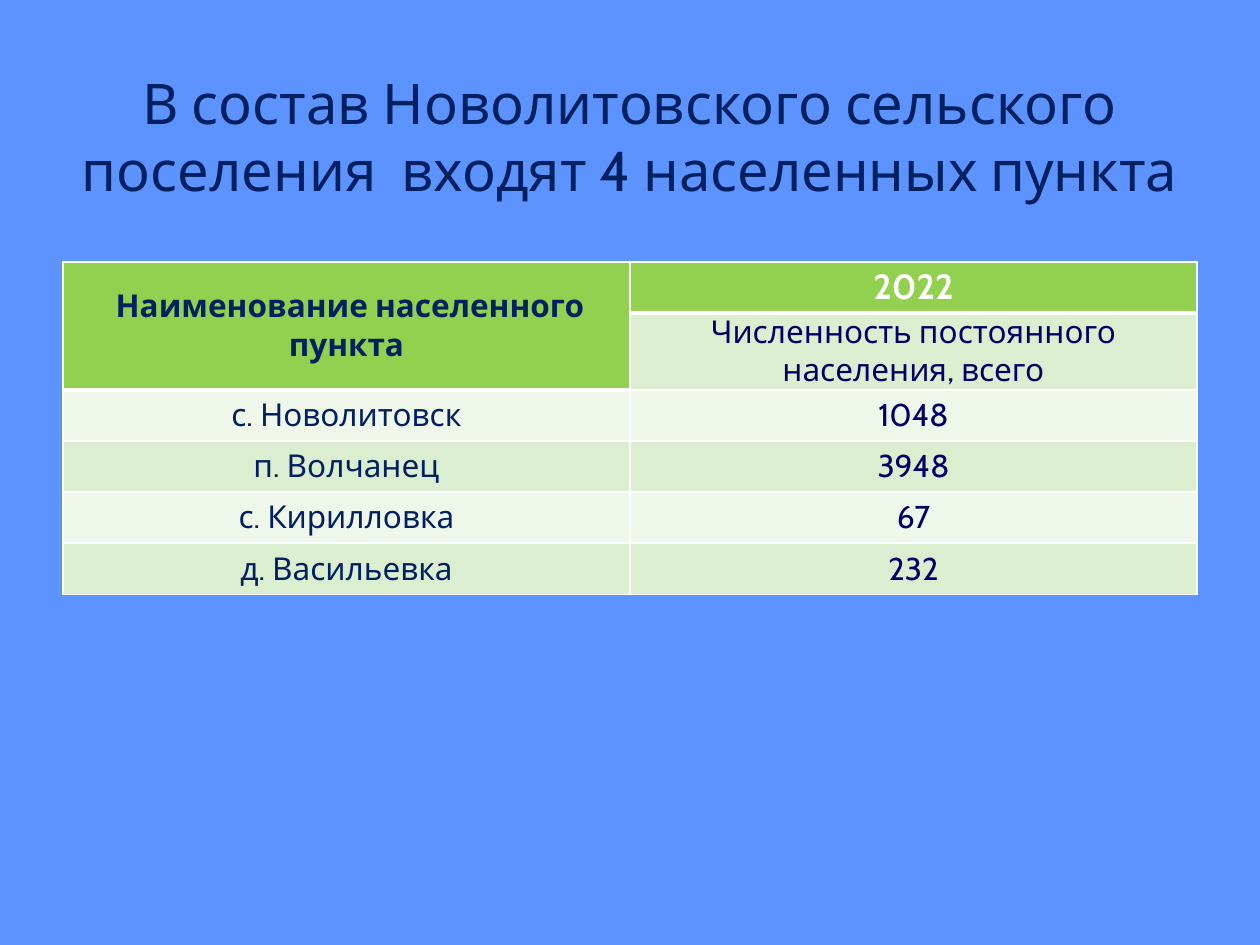
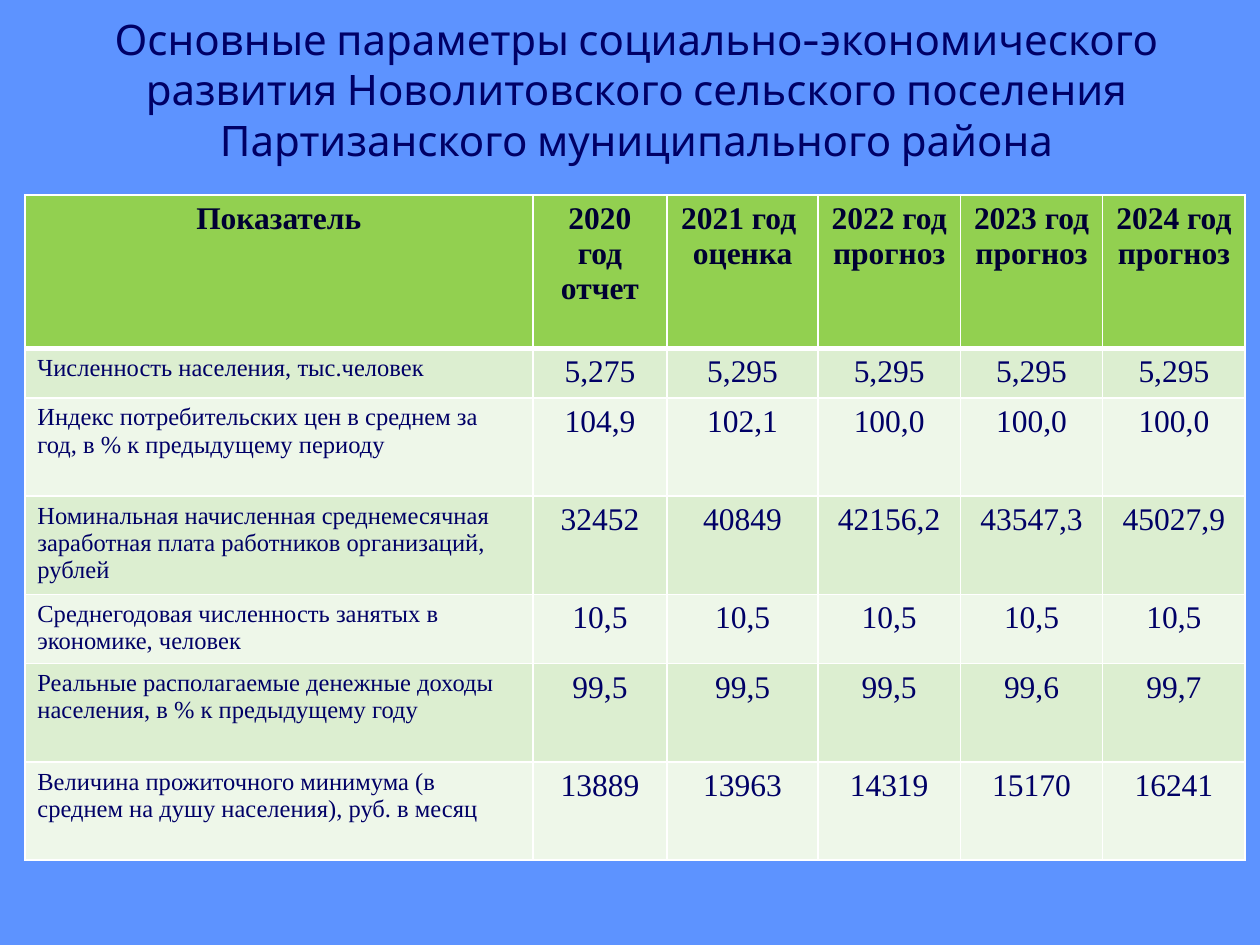
from lxml.etree import SubElement
from pptx import Presentation
from pptx.dml.color import RGBColor
from pptx.enum.text import MSO_ANCHOR, PP_ALIGN
from pptx.oxml.ns import qn
from pptx.util import Cm, Pt

COLORS = {
    "background": "5D93FF", "header": "92D050", "band": "DCEED0", "light": "EEF7E9",
    "border": "FFFFFF", "white": "FFFFFF", "navy": "002060", "indigo": "000066",
    "dark": "000033",
}
TITLE_FONT = "Cabin"
TABLE_FONT = "Times New Roman"


def color(name):
    return RGBColor.from_string(COLORS[name])


class Deck:
    """Holds the shared style and the current slide."""

    def __init__(self):
        self.presentation = Presentation()
        self.presentation.slide_width = Cm(25.4)
        self.presentation.slide_height = Cm(19.05)
        fill = self.presentation.slide_master.background.fill
        fill.solid()
        fill.fore_color.rgb = color("background")

    def add_slide(self):
        self.slide = self.presentation.slides.add_slide(self.presentation.slide_layouts[5])

    def set_text(self, text_frame, text, font, size, color_name, bold=False,
                 alignment=PP_ALIGN.CENTER):
        text_frame.text = text
        for paragraph in text_frame.paragraphs:
            paragraph.alignment = alignment
            for run in paragraph.runs:
                run.font.name = font
                run.font.size = Pt(size)
                run.font.bold = bold
                run.font.color.rgb = color(color_name)

    def title(self, text, left, top, height, size, color_name):
        shape = self.slide.shapes.title
        shape.left, shape.top, shape.width, shape.height = Cm(left), Cm(top), Cm(22.86), Cm(height)
        shape.text_frame.vertical_anchor = MSO_ANCHOR.MIDDLE
        self.set_text(shape.text_frame, text, TITLE_FONT, size, color_name)

    def table(self, left, top, widths, heights):
        table = self.slide.shapes.add_table(
            len(heights), len(widths), Cm(left), Cm(top),
            Cm(sum(widths)), Cm(sum(heights))).table
        for column, width in zip(table.columns, widths):
            column.width = Cm(width)
        for row, height in zip(table.rows, heights):
            row.height = Cm(height)
        return table

    def cell(self, cell, fill_name, bottom=1):
        properties = cell._tc.get_or_add_tcPr()
        for side, points in (("L", 1), ("R", 1), ("T", 1), ("B", bottom)):
            line = SubElement(properties, qn(f"a:ln{side}"), w=str(Pt(points)))
            solid = SubElement(line, qn("a:solidFill"))
            SubElement(solid, qn("a:srgbClr"), val=COLORS["border"])
        cell.fill.solid()
        cell.fill.fore_color.rgb = color(fill_name)


def settlements_slide(deck):
    deck.add_slide()
    deck.title("В состав Новолитовского сельского поселения  входят 4 населенных пункта",
               1.27, 0.81, 3.84, 32, "navy")
    rows = [
        (" Наименование населенного пункта", "2022"),
        ("", "Численность постоянного населения, всего"),
        ("с. Новолитовск", "1048"),
        ("п. Волчанец", "3948"),
        ("с. Кирилловка", "67"),
        ("д. Васильевка", "232"),
    ]
    table = deck.table(1.27, 5.28, [11.43] * 2, [1.03, 1.54] + [1.03] * 4)
    for row_index, row in enumerate(rows):
        for column_index, text in enumerate(row):
            cell = table.cell(row_index, column_index)
            is_name = column_index == 0
            is_header = row_index == 0 or (is_name and row_index == 1)
            band = "band" if row_index % 2 else "light"
            deck.cell(cell, "header" if is_header else band, 3 if is_header else 1)
            cell.margin_left = cell.margin_right = cell.margin_top = cell.margin_bottom = 0
            cell.vertical_anchor = MSO_ANCHOR.MIDDLE
            is_year = row_index == 0 and not is_name
            text_color = "white" if is_year else "navy" if is_name else "indigo"
            deck.set_text(cell.text_frame, text, TITLE_FONT, 20 if is_year else 18,
                          text_color, bold=is_header)
    # The settlement heading covers both header rows
    table.cell(0, 0).merge(table.cell(1, 0))


def indicators_slide(deck):
    deck.add_slide()
    deck.title("Основные параметры социально-экономического развития Новолитовского "
               "сельского поселения Партизанского муниципального района",
               1.4, 0, 3.58, 24, "indigo")
    rows = [
        ("Показатель", "2020 год\nотчет", "2021 год \nоценка", "2022 год\nпрогноз",
         "2023 год прогноз", "2024 год прогноз"),
        ("Численность населения, тыс.человек",
         "5,275", "5,295", "5,295", "5,295", "5,295"),
        ("Индекс потребительских цен в среднем за год, в % к предыдущему периоду",
         "104,9", "102,1", "100,0", "100,0", "100,0"),
        ("Номинальная начисленная среднемесячная заработная плата работников "
         "организаций, рублей", "32452", "40849", "42156,2", "43547,3", "45027,9"),
        ("Среднегодовая численность занятых в экономике, человек",
         "10,5", "10,5", "10,5", "10,5", "10,5"),
        ("Реальные располагаемые денежные доходы населения, в % к предыдущему году",
         "99,5", "99,5", "99,5", "99,6", "99,7"),
        ("Величина прожиточного минимума (в среднем на душу населения), руб. в месяц",
         "13889", "13963", "14319", "15170", "16241"),
    ]
    table = deck.table(0.5, 3.93, [10.24, 2.71, 3.04] + [2.87] * 3,
                       [3.09, 1, 1.98, 1.98, 1.4, 1.98, 1.98])
    for row_index, row in enumerate(rows):
        is_header = row_index == 0
        fill_name = "header" if is_header else "band" if row_index % 2 else "light"
        for column_index, text in enumerate(row):
            cell = table.cell(row_index, column_index)
            deck.cell(cell, fill_name, 3 if is_header else 1)
            is_label = column_index == 0 and not is_header
            deck.set_text(cell.text_frame, text, TABLE_FONT, 14 if is_label else 18,
                          "dark" if is_header else "indigo", bold=is_header,
                          alignment=PP_ALIGN.LEFT if is_label else PP_ALIGN.CENTER)


def main():
    deck = Deck()
    settlements_slide(deck)
    indicators_slide(deck)
    deck.presentation.save("out.pptx")


if __name__ == "__main__":
    main()
